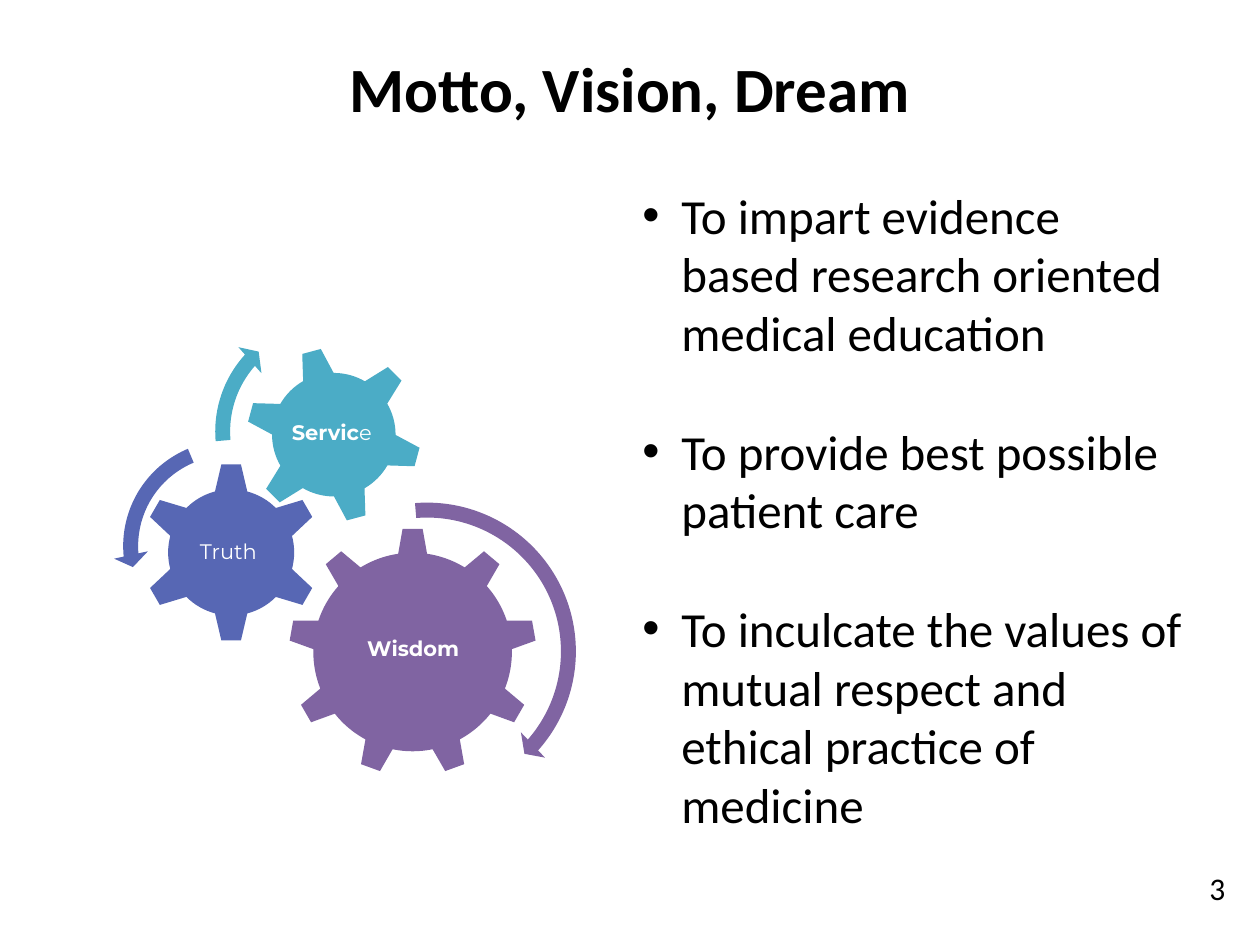
"""Build the motto slide: three turning gears beside a list of aims."""
from dataclasses import dataclass

from lxml import etree
from pptx import Presentation
from pptx import util as u
from pptx.dml.color import RGBColor
from pptx.enum import shapes, text
from pptx.oxml.ns import qn


@dataclass(frozen=True)
class Theme:
    ink: str = "000000"
    label: str = "FFFFFF"
    wisdom: str = "8064A2"
    truth: str = "5767B4"
    service: str = "4BACC6"
    body_font: str = "Calibri"
    gear_font: str = "Montserrat"
    title_size: int = 36
    aim_size: int = 28
    number_size: int = 18
    gear_size: int = 12


class GearSlide:
    def __init__(self, slide, theme):
        self.slide = slide
        self.theme = theme

    def _solid(self, kind, box, color):
        solid = self.slide.shapes.add_shape(kind, *map(u.Inches, box))
        solid.shadow.inherit = False
        solid.fill.solid()
        solid.fill.fore_color.rgb = RGBColor.from_string(color)
        solid.line.fill.background()
        return solid

    def _frame(self, box, inset=None, anchor=text.MSO_ANCHOR.TOP):
        frame = self.slide.shapes.add_textbox(*map(u.Inches, box)).text_frame
        frame.word_wrap = True
        frame.vertical_anchor = anchor
        if inset is not None:
            frame.margin_left = frame.margin_right = u.Inches(inset)
            frame.margin_top = frame.margin_bottom = u.Inches(inset)
        return frame

    def _run(self, paragraph, words, size, font, color, bold=False):
        run = paragraph.add_run()
        run.text = words
        run.font.size = u.Pt(size)
        run.font.name = font
        run.font.bold = bold
        run.font.color.rgb = RGBColor.from_string(color)

    def line(self, words, box, size, bold=False, align=text.PP_ALIGN.LEFT,
             anchor=text.MSO_ANCHOR.TOP):
        paragraph = self._frame(box, anchor=anchor).paragraphs[0]
        paragraph.alignment = align
        self._run(paragraph, words, size, self.theme.body_font, self.theme.ink, bold)

    def gear(self, kind, box, color, rotation=0):
        self._solid(kind, box, color).rotation = rotation

    def gear_label(self, runs, box):
        paragraph = self._frame(box, 0.02, text.MSO_ANCHOR.MIDDLE).paragraphs[0]
        paragraph.alignment = text.PP_ALIGN.CENTER
        paragraph.line_spacing = 0.9
        paragraph.space_after = u.Pt(4.2)
        for words, bold in runs:
            self._run(paragraph, words, self.theme.gear_size,
                      self.theme.gear_font, self.theme.label, bold)

    def turn_arrow(self, kind, box, color, band, angles, head):
        """Band and head are percentages, angles are degrees."""
        arrow = self._solid(kind, box, color)
        values = [band / 100, *(angle * 0.6 for angle in angles), head / 100]
        for index, value in enumerate(values):
            arrow.adjustments[index] = value

    def aims(self, items, box):
        frame = self._frame(box)
        for index, words in enumerate(items):
            paragraph = frame.paragraphs[0] if index == 0 else frame.add_paragraph()
            if index:
                paragraph.space_before = u.Pt(34)
            properties = paragraph._p.get_or_add_pPr()
            properties.set("marL", str(u.Inches(0.31)))
            properties.set("indent", str(-u.Inches(0.31)))
            etree.SubElement(properties, qn("a:buFont")).set("typeface", "Arial")
            etree.SubElement(properties, qn("a:buChar")).set("char", "•")
            self._run(paragraph, words, self.theme.aim_size,
                      self.theme.body_font, self.theme.ink)


def main():
    theme = Theme()
    deck = Presentation()
    deck.slide_width, deck.slide_height = u.Inches(10), u.Inches(7.5)
    page = GearSlide(deck.slides.add_slide(deck.slide_layouts[6]), theme)
    kinds = shapes.MSO_SHAPE

    page.line("Motto, Vision, Dream", (0.5, 0.3, 9, 0.78), theme.title_size, True,
              text.PP_ALIGN.CENTER, text.MSO_ANCHOR.MIDDLE)

    page.gear(kinds.GEAR_9, (2.29, 4.19, 1.97, 1.97), theme.wisdom)
    page.gear_label([("Wisdom", True)], (2.69, 4.65, 1.18, 1.01))
    page.gear(kinds.GEAR_6, (1.12, 3.67, 1.43, 1.43), theme.truth)
    page.gear_label([("Truth ", False)], (1.48, 4.03, 0.71, 0.71))
    page.gear(kinds.GEAR_6, (1.95, 2.75, 1.4, 1.4), theme.service, 345)
    page.gear_label([("Servic", True), ("e ", False)], (2.26, 3.05, 0.79, 0.79))

    page.turn_arrow(kinds.CIRCULAR_ARROW, (2.13, 3.91, 2.52, 2.52), theme.wisdom,
                    4.7, (4.98, 41.49, 265.34), 5.5)
    page.turn_arrow(kinds.LEFT_CIRCULAR_ARROW, (0.9, 3.42, 1.83, 1.83), theme.truth,
                    6.5, (7.17, 174.82, 247.3), 7.5)
    page.turn_arrow(kinds.CIRCULAR_ARROW, (1.63, 2.44, 1.97, 1.97), theme.service,
                    6, (6.57, 221.9, 175.14), 7)

    page.aims([
        "To impart evidence based research oriented medical education",
        "To provide best possible patient care",
        "To inculcate the values of mutual respect and ethical practice of medicine",
    ], (5, 1.42, 4.5, 5.76))
    page.line("3", (9.5, 6.85, 0.5, 0.4), theme.number_size)
    deck.save("out.pptx")


if __name__ == "__main__":
    main()
